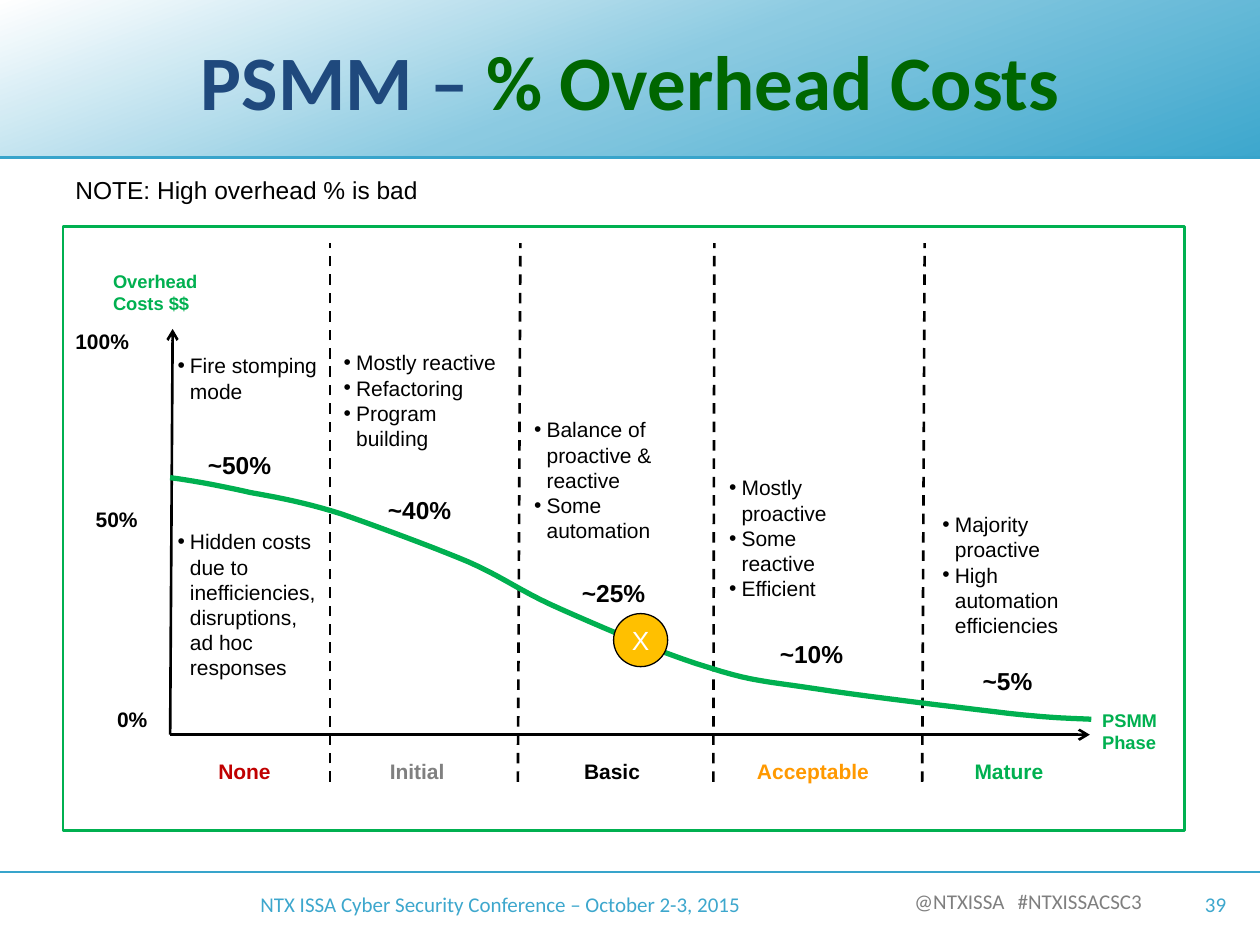
from copy import deepcopy

from lxml import etree
from pptx import Presentation
from pptx.dml.color import RGBColor
from pptx.enum.dml import MSO_LINE
from pptx.enum.shapes import MSO_CONNECTOR, MSO_SHAPE
from pptx.enum.text import MSO_ANCHOR, PP_ALIGN
from pptx.oxml.ns import qn
from pptx.util import Cm, Pt

LEFT, CENTER, RIGHT = PP_ALIGN.LEFT, PP_ALIGN.CENTER, PP_ALIGN.RIGHT
TOP, MIDDLE = MSO_ANCHOR.TOP, MSO_ANCHOR.MIDDLE
RECTANGLE, OVAL = MSO_SHAPE.RECTANGLE, MSO_SHAPE.OVAL
STRAIGHT, DASH = MSO_CONNECTOR.STRAIGHT, MSO_LINE.DASH

GREEN, BLACK, WHITE = "00B050", "000000", "FFFFFF"
SKY, RULE, GREY = "3DA7CD", "38A4CB", "7F7F7F"

# name, colour, label centre, share (text, left, top), notes (left, top, width, bullets)
PHASES = [
    ("None", "C00000", 4.93, ("~50%", 3.94, 8.94),
     [(3.33, 6.99, 3.33, ["Fire stomping mode"]),
      (3.33, 10.54, 3.33, ["Hidden costs due to inefficiencies, disruptions, ad hoc responses"])]),
    ("Initial", "808080", 8.41, ("~40%", 7.57, 9.86),
     [(6.68, 6.93, 3.61, ["Mostly reactive", "Refactoring", "Program building"])]),
    ("Basic", BLACK, 12.34, ("~25%", 11.48, 11.53),
     [(10.52, 8.28, 3.58, ["Balance of proactive & reactive", "Some automation"])]),
    ("Acceptable", "FF9900", 16.39, ("~10%", 15.47, 12.75),
     [(14.45, 9.45, 3.43, ["Mostly proactive", "Some reactive", "Efficient"])]),
    ("Mature", GREEN, 20.34, ("~5%", 19.56, 13.31),
     [(18.75, 10.19, 3.66, ["Majority proactive", "High automation efficiencies"])]),
]
# Bottom x and top x of each phase divider
DIVIDERS = [(6.65, 6.65), (10.44, 10.49), (14.38, 14.4), (18.59, 18.64)]
# Start point, then two control points and an end point for each bend
CURVE = [
    (3.43, 9.63),
    (3.96, 9.7), (4.47, 9.8), (5.05, 9.93),
    (5.61, 10.03), (6.15, 10.13), (6.88, 10.36),
    (7.62, 10.62), (8.71, 11.02), (9.45, 11.33),
    (10.19, 11.66), (10.52, 11.94), (11.33, 12.29),
    (12.14, 12.65), (13.44, 13.21), (14.3, 13.46),
    (15.16, 13.74), (15.49, 13.74), (16.48, 13.89),
    (17.5, 14.05), (19.41, 14.27), (20.32, 14.38),
    (21.23, 14.48), (21.56, 14.48), (22, 14.5),
]


def color(hex_string):
    return RGBColor.from_string(hex_string)


def bezier_points(points, steps=10):
    """Sample a chain of cubic bends."""
    for start in range(0, len(points) - 1, 3):
        bend = points[start:start + 4]
        for step in range(1, steps + 1):
            t = step / steps
            weights = ((1 - t) ** 3, 3 * t * (1 - t) ** 2, 3 * t * t * (1 - t), t ** 3)
            yield tuple(sum(w * p[axis] for w, p in zip(weights, bend)) for axis in (0, 1))


class SlideBuilder:
    def __init__(self, slide, font="Arial", size=12):
        self.slide = slide
        self.font = font
        self.size = size

    def add_runs(self, paragraph, runs, size=None, bold=False, font=None):
        for text, hex_string in runs:
            run = paragraph.add_run()
            run.text = text
            run.font.name = font or self.font
            run.font.size = Pt(size or self.size)
            run.font.bold = bold
            run.font.color.rgb = color(hex_string)

    def frame(self, left, top, width, height, anchor=TOP):
        box = self.slide.shapes.add_textbox(Cm(left), Cm(top), Cm(width), Cm(height))
        box.text_frame.word_wrap = True
        box.text_frame.vertical_anchor = anchor
        return box.text_frame

    def text(self, left, top, width, height, runs, align=LEFT, anchor=TOP, **style):
        paragraph = self.frame(left, top, width, height, anchor).paragraphs[0]
        paragraph.alignment = align
        self.add_runs(paragraph, runs, **style)

    def bullets(self, left, top, width, items):
        text_frame = self.frame(left, top, width, 0.25 + 0.51 * len(items))
        for index, item in enumerate(items):
            paragraph = text_frame.add_paragraph() if index else text_frame.paragraphs[0]
            properties = paragraph._p.get_or_add_pPr()
            properties.set("marL", str(Cm(0.25)))
            properties.set("indent", str(-Cm(0.25)))
            etree.SubElement(properties, qn("a:buFont")).set("typeface", self.font)
            etree.SubElement(properties, qn("a:buChar")).set("char", "•")
            self.add_runs(paragraph, [(item, BLACK)])

    def shape(self, kind, left, top, width, height, fill, line=None, weight=1.5):
        shape = self.slide.shapes.add_shape(kind, Cm(left), Cm(top), Cm(width), Cm(height))
        shape.shadow.inherit = False
        shape.fill.solid()
        shape.fill.fore_color.rgb = color(fill)
        if line:
            shape.line.color.rgb = color(line)
            shape.line.width = Pt(weight)
        else:
            shape.line.fill.background()
        return shape

    def gradient(self, shape, stops, angle):
        shape.fill.gradient()
        shape.fill.gradient_angle = angle
        stop_list = shape._element.spPr.find(qn("a:gradFill")).find(qn("a:gsLst"))
        while len(stop_list) < len(stops):
            stop_list.append(deepcopy(stop_list[0]))
        for stop, (position, hex_string) in zip(shape.fill.gradient_stops, stops):
            stop.position = position
            stop.color.rgb = color(hex_string)

    def line(self, start, end, hex_string=BLACK, dash=None, arrow=False):
        connector = self.slide.shapes.add_connector(STRAIGHT, *map(Cm, start + end))
        connector.line.color.rgb = color(hex_string)
        connector.line.width = Pt(1.5)
        if dash:
            connector.line.dash_style = dash
        if arrow:
            outline = connector.line._get_or_add_ln()
            etree.SubElement(outline, qn("a:tailEnd")).set("type", "arrow")
        etree.SubElement(connector._element.spPr, qn("a:effectLst"))

    def curve(self, points, hex_string, weight):
        builder = self.slide.shapes.build_freeform(Cm(points[0][0]), Cm(points[0][1]))
        builder.add_line_segments([(Cm(x), Cm(y)) for x, y in bezier_points(points)], close=False)
        shape = builder.convert_to_shape()
        shape.shadow.inherit = False
        shape.fill.background()
        shape.line.color.rgb = color(hex_string)
        shape.line.width = Pt(weight)


def main():
    presentation = Presentation()
    presentation.slide_width, presentation.slide_height = Cm(25.4), Cm(19.05)
    page = SlideBuilder(presentation.slides.add_slide(presentation.slide_layouts[6]))

    # Header band and title
    band = page.shape(RECTANGLE, 0, 0, 25.4, 3.18, SKY)
    page.gradient(band, [(0, WHITE), (0.5, "8BCAE1"), (1, SKY)], 290)
    for y in (3.18, 17.58):
        page.line((0, y), (25.4, y), RULE)
    page.text(0.43, 0.43, 24.56, 2.34, [("PSMM – ", "1F497D"), ("% Overhead Costs", "006600")],
              CENTER, MIDDLE, size=44, bold=True, font="Calibri")

    # Footer
    for left, top, width, text, hex_string, align in (
        (5, 17.78, 12.14, "NTX ISSA Cyber Security Conference – October 2-3, 2015", SKY, LEFT),
        (16.5, 17.73, 4, "@NTXISSA", GREY, RIGHT),
        (20.07, 17.73, 3.2, "#NTXISSACSC3", GREY, RIGHT),
        (23.5, 17.78, 1.47, "39", SKY, RIGHT),
    ):
        page.text(left, top, width, 0.89, [(text, hex_string)], align, MIDDLE, font="Calibri")

    # Note and diagram border
    page.text(1.27, 3.4, 22.86, 0.91, [("NOTE: High overhead % is bad", BLACK)], size=14)
    page.shape(RECTANGLE, 1.27, 4.57, 22.61, 12.17, WHITE, GREEN)

    # Axes with titles and scale
    origin = (3.43, 14.81)
    page.line(origin, (3.48, 6.63), arrow=True)
    page.line(origin, (21.97, 14.81), arrow=True)
    page.text(2.03, 5.33, 3.23, 1.35, [("Overhead Costs $$", GREEN)], size=10.5, bold=True)
    page.text(21.97, 14.17, 2.16, 1.35, [("PSMM Phase", GREEN)], size=10.5, bold=True)
    for label, left, top in (("100%", 1.27, 6.5), ("50%", 1.68, 10.08), ("0%", 2.11, 14.12)):
        page.text(left, top, 2.2, 0.91, [(label, BLACK)], bold=True)

    # Phases
    for bottom_x, top_x in DIVIDERS:
        page.line((bottom_x, 15.76), (top_x, 4.9), dash=DASH)
    for name, hex_string, center, (share, left, top), notes in PHASES:
        page.text(center - 1.75, 15.16, 3.5, 0.76, [(name, hex_string)], CENTER, bold=True)
        page.text(left, top, 2.26, 0.86, [(share, BLACK)], size=14, bold=True)
        for note in notes:
            page.bullets(*note)

    # Cost curve and current position
    page.curve(CURVE, GREEN, 3)
    marker = page.shape(OVAL, 12.37, 12.37, 1.09, 1.07, "FFC000", BLACK, 0.75)
    marker_text = marker.text_frame
    marker_text.margin_left = marker_text.margin_right = 0
    marker_text.margin_top = marker_text.margin_bottom = 0
    marker_text.vertical_anchor = MIDDLE
    marker_text.paragraphs[0].alignment = CENTER
    page.add_runs(marker_text.paragraphs[0], [("X", WHITE)], size=15)

    presentation.save("out.pptx")


if __name__ == "__main__":
    main()
